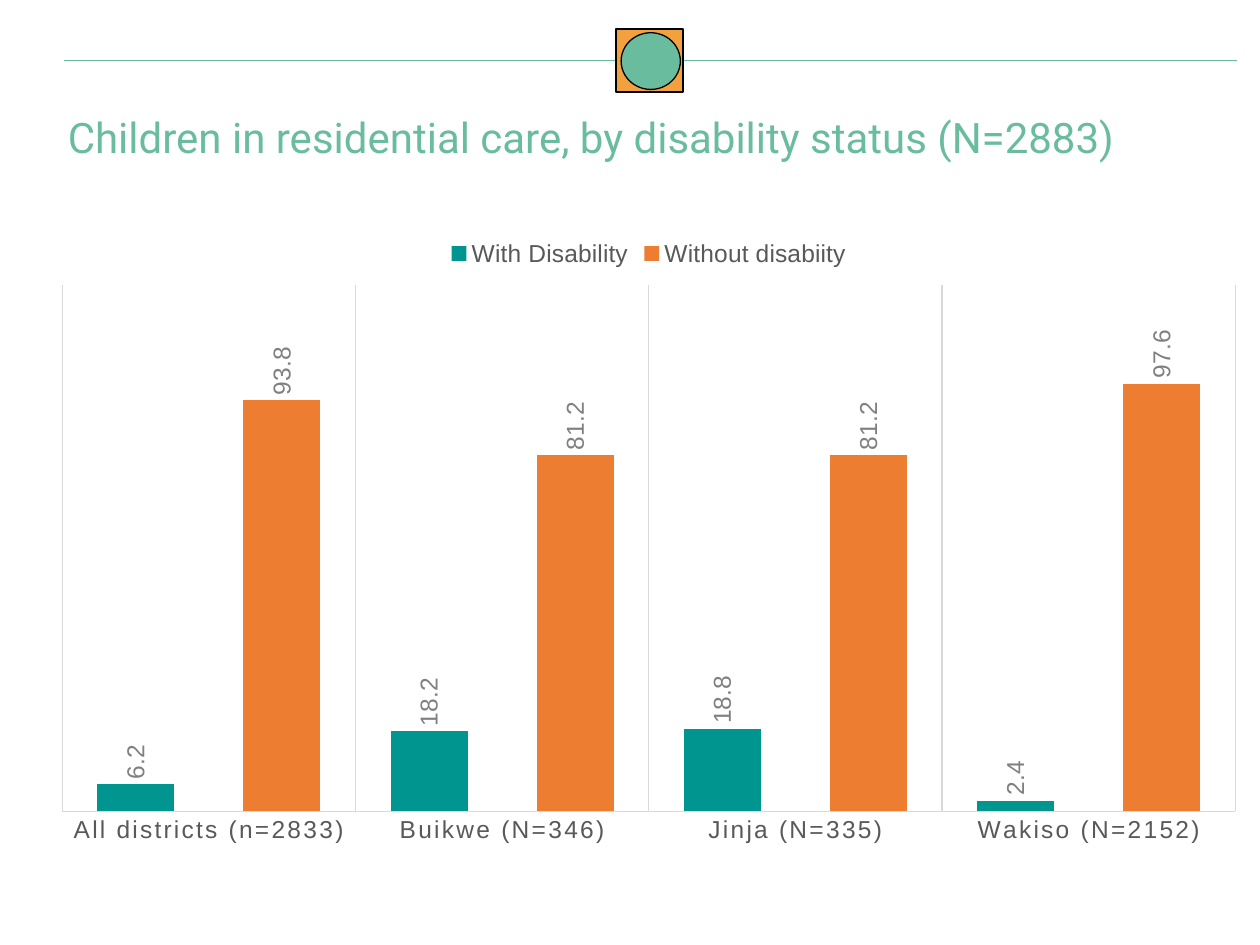
from dataclasses import dataclass

from lxml import etree
from pptx import Presentation
from pptx.chart.data import CategoryChartData
from pptx.dml.color import RGBColor
from pptx.enum.chart import XL_CHART_TYPE as ChartType
from pptx.enum.chart import XL_LABEL_POSITION as LabelPosition
from pptx.enum.chart import XL_LEGEND_POSITION as LegendPosition
from pptx.enum.chart import XL_TICK_LABEL_POSITION as TickLabelPosition
from pptx.enum.chart import XL_TICK_MARK as TickMark
from pptx.enum.shapes import MSO_CONNECTOR as Connector
from pptx.enum.shapes import MSO_SHAPE as Shape
from pptx.oxml import parse_xml
from pptx.oxml.ns import nsdecls, qn
from pptx.util import Inches, Pt


@dataclass(frozen=True)
class Theme:
    green: str = "69BC9E"
    amber: str = "F2A13E"
    outline: str = "000000"
    grid: str = "D9D9D9"
    axis_text: str = "595959"
    label_text: str = "808080"
    with_disability: str = "00968F"
    without_disability: str = "ED7D31"
    title_font: str = "Roboto"
    chart_font: str = "Arial"
    title_size: int = 24
    chart_size: int = 14
    thin: float = 0.75


THEME = Theme()


def set_font(font, name, size, color):
    font.name = name
    font.size = Pt(size)
    font.color.rgb = RGBColor.from_string(color)


def set_line(line, color, width):
    line.color.rgb = RGBColor.from_string(color)
    line.width = Pt(width)


def write_text(text_frame, text, *, font, size, color, line_spacing=1.0):
    text_frame.word_wrap = True
    paragraph = text_frame.paragraphs[0]
    paragraph.line_spacing = line_spacing
    run = paragraph.add_run()
    run.text = text
    set_font(run.font, font, size, color)


def place_plot_area(chart, x, y, width, height):
    """Fix the inner plot area, in fractions of the chart frame."""
    plot_area = chart._chartSpace.chart.plotArea
    for layout in plot_area.findall(qn("c:layout")):
        plot_area.remove(layout)
    values = {"x": x, "y": y, "w": width, "h": height}
    places = "".join(f'<c:{key} val="{value}"/>' for key, value in values.items())
    plot_area.insert(0, parse_xml(
        f'<c:layout {nsdecls("c")}><c:manualLayout><c:layoutTarget val="inner"/>'
        f'<c:xMode val="edge"/><c:yMode val="edge"/>{places}'
        f'</c:manualLayout></c:layout>'))


class SlideBuilder:
    def __init__(self, slide, theme):
        self.slide = slide
        self.theme = theme

    def line(self, x1, y1, x2, y2, color):
        connector = self.slide.shapes.add_connector(
            Connector.STRAIGHT, Inches(x1), Inches(y1), Inches(x2), Inches(y2))
        set_line(connector.line, color, self.theme.thin)
        etree.SubElement(connector._element.spPr, qn("a:effectLst"))

    def shape(self, kind, left, top, width, height, fill, line_width):
        shape = self.slide.shapes.add_shape(
            kind, Inches(left), Inches(top), Inches(width), Inches(height))
        shape.shadow.inherit = False
        shape.fill.solid()
        shape.fill.fore_color.rgb = RGBColor.from_string(fill)
        set_line(shape.line, self.theme.outline, line_width)

    def title(self, text, left, top, width, height):
        box = self.slide.shapes.add_textbox(
            Inches(left), Inches(top), Inches(width), Inches(height))
        write_text(box.text_frame, text, font=self.theme.title_font,
                   size=self.theme.title_size, color=self.theme.green,
                   line_spacing=0.9)

    def column_chart(self, categories, series, left, top, width, height):
        """Add clustered columns; series holds (name, values, color) rows."""
        data = CategoryChartData(number_format="0.0")
        data.categories = categories
        for name, values, _ in series:
            data.add_series(name, values)
        chart = self.slide.shapes.add_chart(
            ChartType.COLUMN_CLUSTERED, Inches(left), Inches(top),
            Inches(width), Inches(height), data).chart
        self.chart_font(chart.font, self.theme.axis_text)
        chart.has_title = False

        chart.has_legend = True
        chart.legend.position = LegendPosition.TOP
        chart.legend.include_in_layout = False
        self.chart_font(chart.legend.font, self.theme.axis_text)

        plot = chart.plots[0]
        plot.gap_width, plot.overlap = 91, -90
        plot.vary_by_categories = False
        for column, (_, _, color) in zip(plot.series, series):
            self.style_column(column, color)
        self.style_axes(chart)
        place_plot_area(chart, 0.02, 0.095, 0.96, 0.835)

    def chart_font(self, font, color):
        set_font(font, self.theme.chart_font, self.theme.chart_size, color)

    def style_column(self, column, color):
        column.invert_if_negative = False
        column.format.fill.solid()
        column.format.fill.fore_color.rgb = RGBColor.from_string(color)
        labels = column.data_labels
        labels.show_value = True
        labels.position = LabelPosition.OUTSIDE_END
        labels.number_format = "0.0"
        labels.number_format_is_linked = False
        self.chart_font(labels.font, self.theme.label_text)
        for body in column._element.iter(qn("a:bodyPr")):
            body.set("rot", "-5400000")
            body.set("vert", "horz")

    def style_axes(self, chart):
        value_axis = chart.value_axis
        value_axis.minimum_scale, value_axis.maximum_scale = 0, 120
        value_axis.has_major_gridlines = False
        value_axis.visible = False

        axis = chart.category_axis
        axis.major_tick_mark = axis.minor_tick_mark = TickMark.NONE
        axis.tick_label_position = TickLabelPosition.NEXT_TO_AXIS
        axis.has_major_gridlines = True
        for line in (axis.format.line, axis.major_gridlines.format.line):
            set_line(line, self.theme.grid, self.theme.thin)
        self.chart_font(axis.tick_labels.font, self.theme.axis_text)
        for properties in axis._element.iter(qn("a:defRPr")):
            properties.set("spc", "120")


def main():
    presentation = Presentation()
    presentation.slide_width, presentation.slide_height = Inches(10), Inches(7.5)
    slide = presentation.slides.add_slide(presentation.slide_layouts[6])
    builder = SlideBuilder(slide, THEME)

    builder.line(0.51, 0.48, 9.82, 0.48, THEME.green)
    builder.shape(Shape.RECTANGLE, 4.89, 0.23, 0.53, 0.5, THEME.amber, 1)
    builder.shape(Shape.OVAL, 4.93, 0.26, 0.47, 0.45, THEME.green, THEME.thin)
    builder.title("Children in residential care, by disability status (N=2883)",
                  0.44, 0.88, 9.16, 0.92)
    builder.column_chart(
        ["All districts (n=2833)", "Buikwe (N=346)", "Jinja (N=335)",
         "Wakiso (N=2152)"],
        [("With Disability", (6.2, 18.2, 18.8, 2.4), THEME.with_disability),
         ("Without disabiity", (93.8, 81.2, 81.2, 97.6),
          THEME.without_disability)],
        0.3, 1.79, 9.7, 5)
    presentation.save("out.pptx")


if __name__ == "__main__":
    main()
